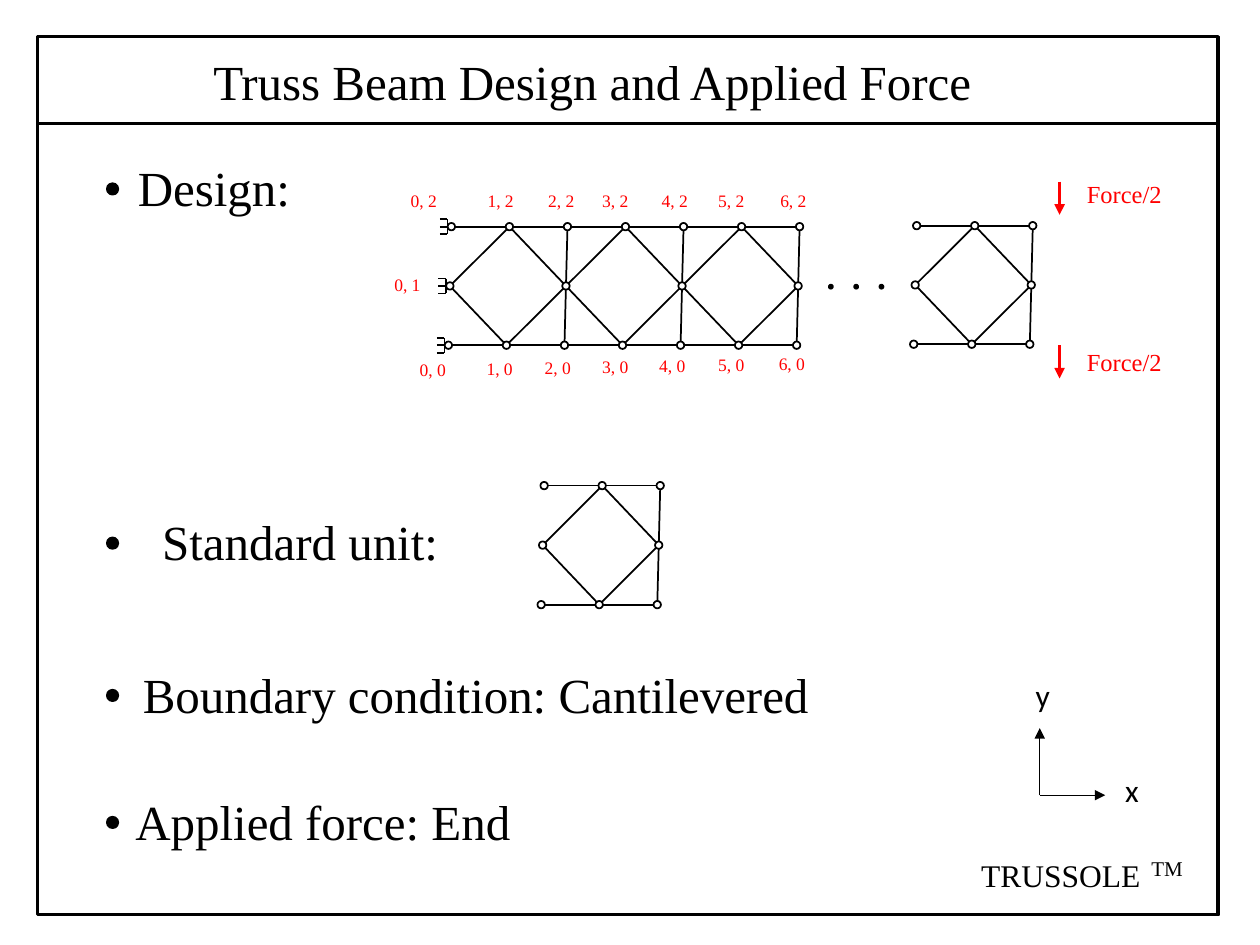
from lxml import etree
from pptx import Presentation
from pptx.dml.color import RGBColor
from pptx.enum import shapes, text
from pptx.oxml import ns
from pptx.util import Cm, Pt

BLACK = RGBColor(0x00, 0x00, 0x00)
WHITE = RGBColor(0xFF, 0xFF, 0xFF)
RED = RGBColor(0xFF, 0x00, 0x00)
SERIF = "Times New Roman"
SANS = "Calibri"
BAY = 1.17
LEAN = 0.03


def add_text(slide, words, left, top, width, height, size=28, font=SERIF,
             color=BLACK, inset=0.13, inset_left=None, inset_top=0.13):
    box = slide.shapes.add_textbox(Cm(left), Cm(top), Cm(width), Cm(height))
    frame = box.text_frame
    frame.word_wrap = True
    frame.auto_size = text.MSO_AUTO_SIZE.SHAPE_TO_FIT_TEXT
    frame.margin_left = Cm(inset if inset_left is None else inset_left)
    frame.margin_right = Cm(inset)
    frame.margin_top = Cm(inset_top)
    frame.margin_bottom = Cm(0.13)
    run = frame.paragraphs[0].add_run()
    run.text = words
    run.font.size = Pt(size)
    run.font.name = font
    run.font.color.rgb = color


def add_line(slide, start, end, color=BLACK, weight=1, arrow=False):
    connector = slide.shapes.add_connector(
        shapes.MSO_CONNECTOR.STRAIGHT, *(Cm(value) for value in (*start, *end)))
    connector.line.color.rgb = color
    connector.line.width = Pt(weight)
    if arrow:
        outline = connector.line._get_or_add_ln()
        etree.SubElement(outline, ns.qn("a:tailEnd"), type="triangle")
    properties = connector._element.spPr
    etree.SubElement(properties, ns.qn("a:effectLst"))


def add_outlined(slide, kind, left, top, width, height, fill=None, weight=1):
    shape = slide.shapes.add_shape(kind, Cm(left), Cm(top), Cm(width), Cm(height))
    shape.shadow.inherit = False
    if fill is None:
        shape.fill.background()
    else:
        shape.fill.solid()
        shape.fill.fore_color.rgb = fill
    shape.line.color.rgb = BLACK
    shape.line.width = Pt(weight)


def add_circle(slide, center, diameter, fill):
    x, y = center
    add_outlined(slide, shapes.MSO_SHAPE.OVAL, x - diameter / 2, y - diameter / 2,
                 diameter, diameter, fill)


def draw_frame(slide, left, top, width, height):
    add_outlined(slide, shapes.MSO_SHAPE.RECTANGLE, left, top, width, height, weight=2)
    add_line(slide, (left, top + 1.75), (left + width, top + 1.75), weight=2)
    add_text(slide, "Truss Beam Design and Applied Force",
             left + 2.57, top + 0.17, 18.67, 1.45, inset_left=0.97)


def draw_bullets(slide, left):
    bullets = (
        ("Design:", 2.06, 3.05, 4.8, 0.72),
        ("Standard unit:", 2.57, 10.19, 7.24, 0.7),
        ("Boundary condition: Cantilevered", 2.01, 13.26, 16.23, 0.87),
        ("Applied force: End", 2.39, 15.82, 9.47, 0.34),
    )
    for words, text_left, top, width, indent in bullets:
        add_circle(slide, (left, top + 0.76), 0.23, BLACK)
        add_text(slide, words, text_left, top, width, 1.35, inset_left=indent)


def draw_truss(slide, left, top, height, units):
    def joint(column, row):
        return left + BAY * column + LEAN * row, top + height * (2 - row) / 2

    columns = 2 * units
    bars = [((column, row), (column + 1, row))
            for row in (0, 2) for column in range(columns)]
    for start in range(0, columns, 2):
        end = start + 2
        for row in (0, 2):
            bars += [((start, 1), (start + 1, row)),
                     ((start + 1, row), (end, 1)),
                     ((end, 1), (end, row))]
    for start, end in bars:
        add_line(slide, joint(*start), joint(*end))
    for column in range(columns + 1):
        for row in (0, 2) if column % 2 else (0, 1, 2):
            add_circle(slide, joint(column, row), 0.15, WHITE)


def draw_supports(slide, left, top, height):
    for row in range(3):
        x = left + LEAN * row - 0.08
        y = top + height * (2 - row) / 2
        add_line(slide, (x, y - 0.15), (x, y + 0.15))
        for offset in (-0.15, 0, 0.15):
            add_line(slide, (x - 0.15, y + offset), (x, y + offset))


def draw_joint_labels(slide, left, top):
    upper = (0, 1.55, 2.77, 3.86, 5.06, 6.2, 7.45)
    lower = (0.18, 1.53, 2.7, 3.86, 5.01, 6.2, 7.42)
    labels = [("0, 1", -0.33, 1.68)]
    for column, (high, low) in enumerate(zip(upper, lower)):
        labels += [(f"{column}, 2", high, 0),
                   (f"{column}, 0", low, 3.4 - 0.02 * column)]
    for words, x, y in labels:
        add_text(slide, words, left + x, top + y, 1.14, 0.64, size=10, color=RED)


def draw_ellipsis(slide, left, top):
    for index in range(3):
        add_circle(slide, (left + 0.51 * index, top), 0.08, BLACK)


def draw_force(slide, left, top, label_top):
    add_line(slide, (left, top), (left, top + 0.67), RED, 2, arrow=True)
    add_text(slide, "Force/2", left + 0.42, label_top, 2.3, 0.86, size=14, color=RED)


def draw_axes(slide, left, top):
    origin = (left, top)
    for end in ((left + 1.32, top), (left, top - 1.35)):
        add_line(slide, origin, end, weight=0.5, arrow=True)
    for words, x, y in (("x", 1.47, -0.61), ("y", -0.33, -2.54)):
        add_text(slide, words, left + x, top + y, 0.79, 1.02,
                 size=18, font=SANS, inset=0.25)


def draw_mark(slide, left, top):
    add_text(slide, "TRUSSOLE", left, top, 3.86, 1.02, size=18, inset=0.25)
    add_text(slide, "TM", left + 3.43, top - 0.25, 1.3, 1.02,
             size=12, inset=0.25, inset_top=0.38)


def main():
    presentation = Presentation()
    presentation.slide_width = Cm(25.4)
    presentation.slide_height = Cm(19.05)
    slide = presentation.slides.add_slide(presentation.slide_layouts[6])
    draw_frame(slide, 0.76, 0.74, 23.8, 17.7)
    draw_bullets(slide, 2.27)
    draw_truss(slide, 10.91, 9.79, 2.4, units=1)
    draw_truss(slide, 9.04, 4.57, 2.39, units=3)
    draw_supports(slide, 9.04, 4.57, 2.39)
    draw_joint_labels(slide, 8.15, 3.71)
    draw_ellipsis(slide, 16.75, 5.78)
    draw_truss(slide, 18.42, 4.55, 2.39, units=1)
    draw_force(slide, 21.36, 3.66, label_top=3.48)
    draw_force(slide, 21.36, 6.96, label_top=6.86)
    draw_axes(slide, 20.96, 16.03)
    draw_mark(slide, 19.53, 17.12)
    presentation.save("out.pptx")


if __name__ == "__main__":
    main()
